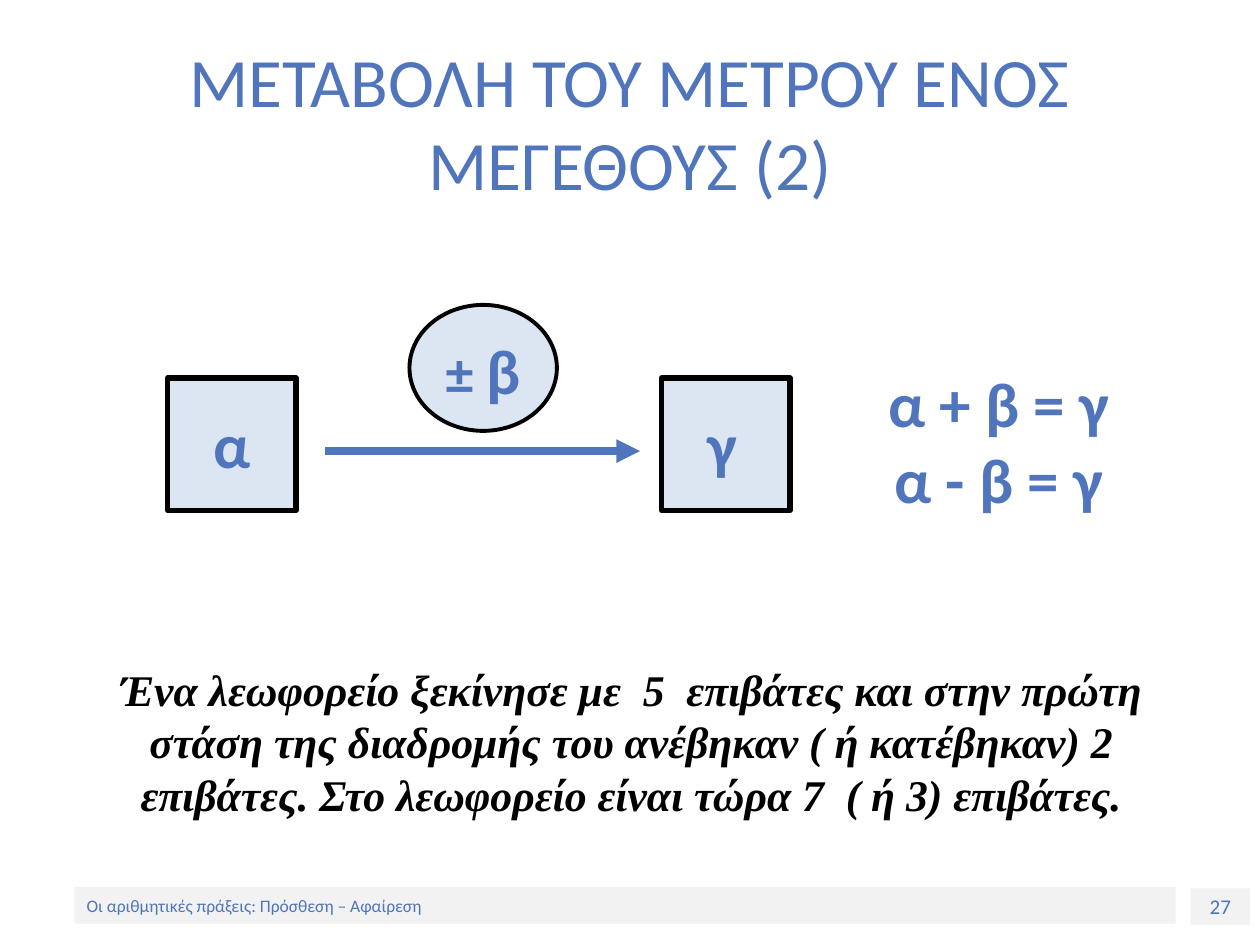
from lxml.etree import SubElement
from pptx import Presentation
from pptx.dml.color import RGBColor
from pptx.enum.shapes import MSO_CONNECTOR, MSO_SHAPE
from pptx.enum.text import MSO_ANCHOR, PP_ALIGN
from pptx.oxml.ns import qn
from pptx.util import Inches, Pt

BLUE, PALE_BLUE, GREY, BLACK = "5075BC", "DCE6F2", "F2F2F2", "000000"

# Rows and columns of the diagram, in inches
START_X, END_X = 1.33, 5.25
SQUARE_Y, SQUARE_W, SQUARE_H = 3, 1.02, 1.05
CHANGE_X, CHANGE_W = 3.25, 1.17
LABEL_Y, LABEL_W, LABEL_H = 3.17, 0.63, 0.7


def color(hex_string):
    return RGBColor.from_string(hex_string)


def write(shape, text, size, font="Calibri", ink=BLUE, bold=False, italic=False,
          align=PP_ALIGN.CENTER, anchor=MSO_ANCHOR.MIDDLE, wrap=True):
    frame = shape.text_frame
    frame.text = text
    frame.word_wrap = wrap
    frame.vertical_anchor = anchor
    for paragraph in frame.paragraphs:
        paragraph.alignment = align
        for run in paragraph.runs:
            run.font.name = font
            run.font.size = Pt(size)
            run.font.bold = bold
            run.font.italic = italic
            run.font.color.rgb = color(ink)
    return frame


def add_text(slide, box, text, size, **style):
    return write(slide.shapes.add_textbox(*map(Inches, box)), text, size, **style)


def add_figure(slide, preset, box, fill, line_width=0):
    figure = slide.shapes.add_shape(preset, *map(Inches, box))
    figure.shadow.inherit = False
    figure.fill.solid()
    figure.fill.fore_color.rgb = color(fill)
    if line_width:
        figure.line.color.rgb = color(BLACK)
        figure.line.width = Pt(line_width)
    else:
        figure.line.fill.background()
    return figure


def add_arrow(slide, start_x, end_x, y):
    arrow = slide.shapes.add_connector(
        MSO_CONNECTOR.STRAIGHT, *map(Inches, (start_x, y, end_x, y)))
    arrow.line.color.rgb = color(BLUE)
    arrow.line.width = Pt(4.5)
    SubElement(arrow.line._get_or_add_ln(), qn("a:tailEnd"), type="triangle")
    SubElement(arrow._element.spPr, qn("a:effectLst"))


def add_footer(slide):
    page = add_figure(slide, MSO_SHAPE.RECTANGLE, (9.45, 7.05, 0.47, 0.29), GREY)
    write(page, "27", 12)
    topic = add_figure(slide, MSO_SHAPE.RECTANGLE, (0.59, 7.04, 8.74, 0.29), GREY)
    write(topic, "Οι αριθμητικές πράξεις: Πρόσθεση – Αφαίρεση", 10, align=PP_ALIGN.LEFT)


def add_diagram(slide):
    add_figure(slide, MSO_SHAPE.OVAL, (CHANGE_X, 2.42, CHANGE_W, 1), PALE_BLUE, 2.25)
    for x, label_x, quantity in ((START_X, 1.53, "α"), (END_X, 5.42, "γ")):
        add_figure(slide, MSO_SHAPE.RECTANGLE, (x, SQUARE_Y, SQUARE_W, SQUARE_H),
                   PALE_BLUE, 3)
        add_text(slide, (label_x, LABEL_Y, LABEL_W, LABEL_H), quantity, 36, bold=True)

    change = add_text(slide, (CHANGE_X, 2.58, CHANGE_W, LABEL_H), "± ", 32, bold=True)
    operand = change.paragraphs[0].add_run()
    operand.text = "β"
    operand.font.name = "Calibri"
    operand.font.size = Pt(36)
    operand.font.bold = True
    operand.font.color.rgb = color(BLUE)

    add_arrow(slide, 2.58, 5.08, 3.58)
    add_text(slide, (6.94, 2.84, 1.97, 1.31), "α + β = γ\nα - β = γ", 36,
             bold=True, wrap=False)


def add_problem(slide):
    problem = add_text(
        slide, (0.51, 5.21, 9, 1.35),
        "Ένα λεωφορείο ξεκίνησε με  5  επιβάτες και στην πρώτη στάση της διαδρομής "
        "του ανέβηκαν ( ή κατέβηκαν) 2 επιβάτες. Στο λεωφορείο είναι τώρα 7  ( ή 3) "
        "επιβάτες.",
        25, font="Times New Roman", ink=BLACK, bold=True, italic=True,
        anchor=MSO_ANCHOR.TOP)
    problem.paragraphs[0].line_spacing = Pt(30)


def main():
    deck = Presentation()
    deck.slide_width, deck.slide_height = Inches(10), Inches(7.5)
    slide = deck.slides.add_slide(deck.slide_layouts[6])
    add_footer(slide)
    add_text(slide, (0.5, 0.34, 9, 1.25), "ΜΕΤΑΒΟΛΗ ΤΟΥ ΜΕΤΡΟΥ ΕΝΟΣ ΜΕΓΕΘΟΥΣ (2)", 39.6)
    add_diagram(slide)
    add_problem(slide)
    deck.save("out.pptx")


if __name__ == "__main__":
    main()
